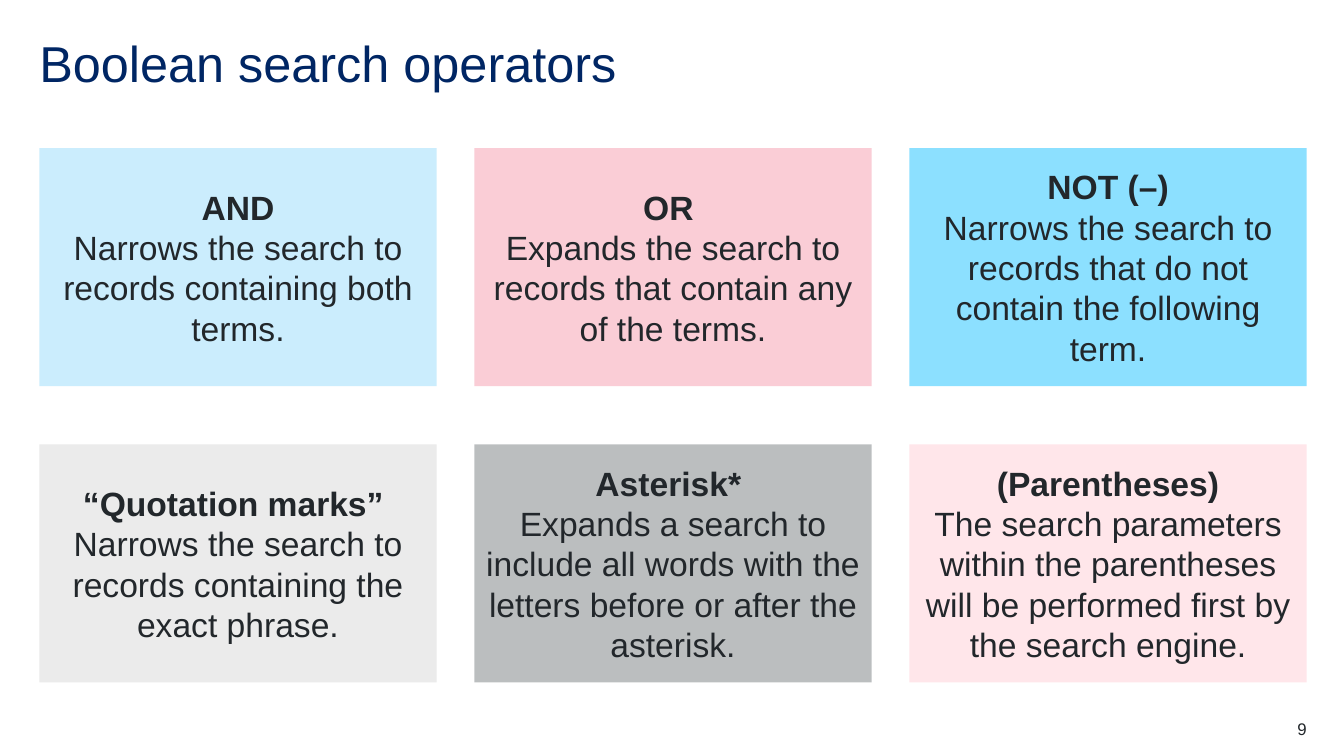
from lxml import etree
from pptx import Presentation
from pptx.dml.color import RGBColor
from pptx.enum.shapes import MSO_SHAPE
from pptx.enum.text import MSO_ANCHOR, PP_ALIGN
from pptx.oxml.ns import qn
from pptx.util import Inches, Pt

CARD_SHAPE = MSO_SHAPE.ROUNDED_RECTANGLE
MIDDLE = MSO_ANCHOR.MIDDLE
LEFT, CENTER, RIGHT = PP_ALIGN.LEFT, PP_ALIGN.CENTER, PP_ALIGN.RIGHT

FONT = "Arial"
NAVY, INK = "002664", "22272B"
MARGIN = 0.39
COLUMNS = 3

# Operator, explanation, fill colour, opacity in percent
OPERATORS = [
    ("AND", "Narrows the search to records containing both terms.", "CBEDFD", 100),
    ("OR ", "Expands the search to records that contain any of the terms.", "FACDD6", 100),
    ("NOT (–)", "Narrows the search to records that do not contain the following term.",
     "8CE0FF", 100),
    ("“Quotation marks” ", "Narrows the search to records containing the exact phrase.",
     "EBEBEB", 100),
    ("Asterisk* ", "Expands a search to include all words with the letters before or after "
     "the asterisk.", "495054", 37),
    ("(Parentheses)", "The search parameters within the parentheses will be performed first "
     "by the search engine.", "FFE6EA", 100),
]


def rgb(value):
    return RGBColor.from_string(value)


def write(p, text, size, color=INK, bold=False, align=LEFT):
    p.alignment = align
    r = p.add_run()
    r.text = text
    for name, value in {"name": FONT, "size": Pt(size), "bold": bold}.items():
        setattr(r.font, name, value)
    r.font.color.rgb = rgb(color)


def add_label(slide, box, text, size, **style):
    """Add a one-line text box without insets and return its paragraph."""
    tf = slide.shapes.add_textbox(*map(Inches, box)).text_frame
    tf.word_wrap = True
    for side in ("left", "top", "right", "bottom"):
        setattr(tf, f"margin_{side}", 0)
    p = tf.paragraphs[0]
    write(p, text, size, **style)
    return p


def add_card(slide, box, operator, explanation, fill, opacity):
    sp = slide.shapes.add_shape(CARD_SHAPE, *map(Inches, box))
    sp.adjustments[0] = 0
    sp.shadow.inherit = False
    sp.line.fill.background()
    sp.fill.solid()
    sp.fill.fore_color.rgb = rgb(fill)
    if opacity < 100:
        color = sp.fill._xPr.find(qn("a:solidFill"))[0]
        etree.SubElement(color, qn("a:alpha"), val=str(opacity * 1000))
    tf = sp.text_frame
    tf.word_wrap = True
    tf.vertical_anchor = MIDDLE
    write(tf.paragraphs[0], operator, 24, bold=True, align=CENTER)
    write(tf.add_paragraph(), explanation, 24, align=CENTER)


def add_card_grid(slide, box, cards):
    left, top, width, height = box
    card_w, card_h = 3.94, 2.36
    rows = len(cards) // COLUMNS
    step_x = (width - card_w) / (COLUMNS - 1)
    step_y = (height - card_h) / (rows - 1)
    for i, card in enumerate(cards):
        row, col = divmod(i, COLUMNS)
        add_card(slide, (left + col * step_x, top + row * step_y, card_w, card_h), *card)


def build_operators_slide(prs):
    slide = prs.slides.add_slide(prs.slide_layouts[6])
    title = add_label(slide, (MARGIN, 0.39, 12.56, 0.6), "Boolean search operators", 36,
                      color=NAVY)
    title.line_spacing = 0.9
    add_card_grid(slide, (MARGIN, 1.47, 12.57, 5.3), OPERATORS)
    add_label(slide, (12.17, 7.13, 0.79, 0.2), "9", 12, align=RIGHT)


def main():
    prs = Presentation()
    prs.slide_width, prs.slide_height = Inches(13.33), Inches(7.5)
    build_operators_slide(prs)
    prs.save("out.pptx")


if __name__ == "__main__":
    main()
